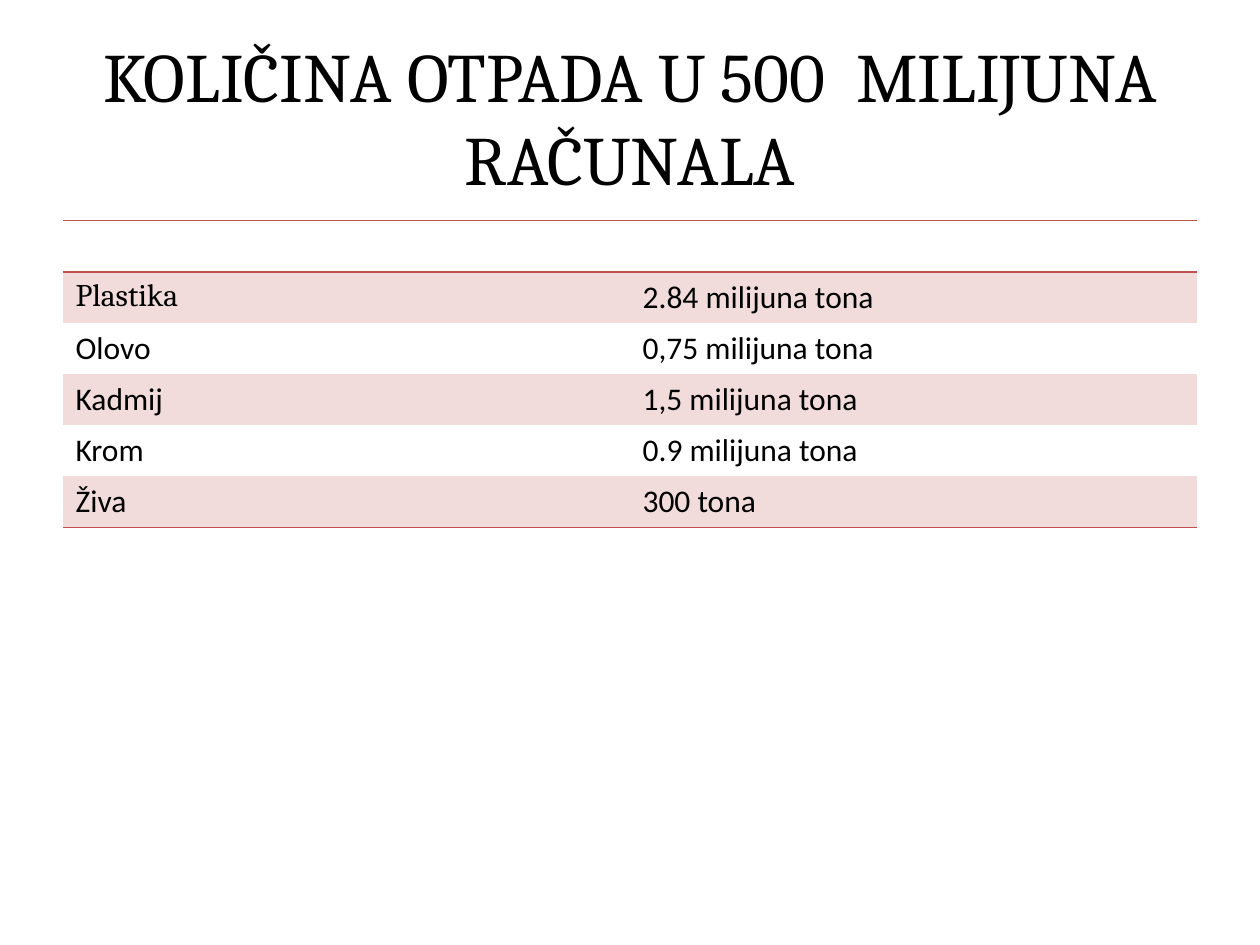
from typing import NamedTuple

from lxml.etree import SubElement
from pptx import Presentation
from pptx.dml.color import RGBColor
from pptx.enum.text import MSO_ANCHOR as Anchor, PP_ALIGN as Align
from pptx.oxml.ns import qn
from pptx.util import Cm, Pt

BLACK = RGBColor(0x00, 0x00, 0x00)
RED = RGBColor(0xC0, 0x50, 0x4D)
PINK = RGBColor(0xF2, 0xDC, 0xDB)
PLAIN_TABLE_STYLE = "{2D5ABB26-0587-4C30-8999-92F81FD0307C}"

LEFT, WIDTH = Cm(1.27), Cm(22.86)
ROW_HEIGHT = Cm(1.03)


class Waste(NamedTuple):
    material: str
    amount: str
    material_font: str = "Calibri"


WASTE = [
    Waste("Plastika", "2.84 milijuna tona", "Cambria"),
    Waste("Olovo", "0,75 milijuna tona"),
    Waste("Kadmij", "1,5 milijuna tona"),
    Waste("Krom", "0.9 milijuna tona"),
    Waste("Živa", "300 tona"),
]


def format_font(font, name: str, size: float) -> None:
    for attribute, value in {"name": name, "size": Pt(size), "bold": False}.items():
        setattr(font, attribute, value)
    font.color.rgb = BLACK


def add_border(cell, side: str) -> None:
    properties = cell._tc.get_or_add_tcPr()
    line = SubElement(properties, qn(f"a:ln{side}"), w=str(Pt(1)))
    fill = SubElement(line, qn("a:solidFill"))
    SubElement(fill, qn("a:srgbClr"), val=str(RED))


def add_title(slide, text: str) -> None:
    title = slide.shapes.title
    box = {"left": LEFT, "top": Cm(0.76), "width": WIDTH, "height": Cm(3.18)}
    for attribute, value in box.items():
        setattr(title, attribute, value)
    frame = title.text_frame
    frame.text = text
    frame.word_wrap = True
    frame.vertical_anchor = Anchor.MIDDLE
    paragraph = frame.paragraphs[0]
    paragraph.alignment = Align.CENTER
    format_font(paragraph.runs[0].font, "Cambria", 39.6)


def fill_cell(cell, text: str, font_name: str, banded: bool) -> None:
    paragraph = cell.text_frame.paragraphs[0]
    run = paragraph.add_run()
    run.text = text
    format_font(run.font, font_name, 18)
    if banded:
        cell.fill.solid()
        cell.fill.fore_color.rgb = PINK
    else:
        cell.fill.background()


def add_waste_table(slide, rows: list[Waste]) -> None:
    count = len(rows) + 1
    frame = slide.shapes.add_table(count, 2, LEFT, Cm(4.45), WIDTH, ROW_HEIGHT * count)
    table = frame.table
    table.horz_banding = False
    table._tbl.tblPr.find(qn("a:tableStyleId")).text = PLAIN_TABLE_STYLE
    for row in table.rows:
        row.height = ROW_HEIGHT

    # Empty header row between two rules, and a rule under the last row
    for column in range(2):
        header = table.cell(0, column)
        add_border(header, "T")
        add_border(header, "B")
        header.fill.background()
        add_border(table.cell(count - 1, column), "B")

    # Materials and amounts, every other row tinted
    for index, waste in enumerate(rows, start=1):
        banded = index % 2 == 1
        fill_cell(table.cell(index, 0), waste.material, waste.material_font, banded)
        fill_cell(table.cell(index, 1), waste.amount, "Calibri", banded)


def main() -> None:
    presentation = Presentation()
    presentation.slide_width, presentation.slide_height = Cm(25.4), Cm(19.05)
    slide = presentation.slides.add_slide(presentation.slide_layouts[5])
    add_title(slide, "KOLIČINA OTPADA U 500  MILIJUNA RAČUNALA")
    add_waste_table(slide, WASTE)
    presentation.save("out.pptx")


if __name__ == "__main__":
    main()
